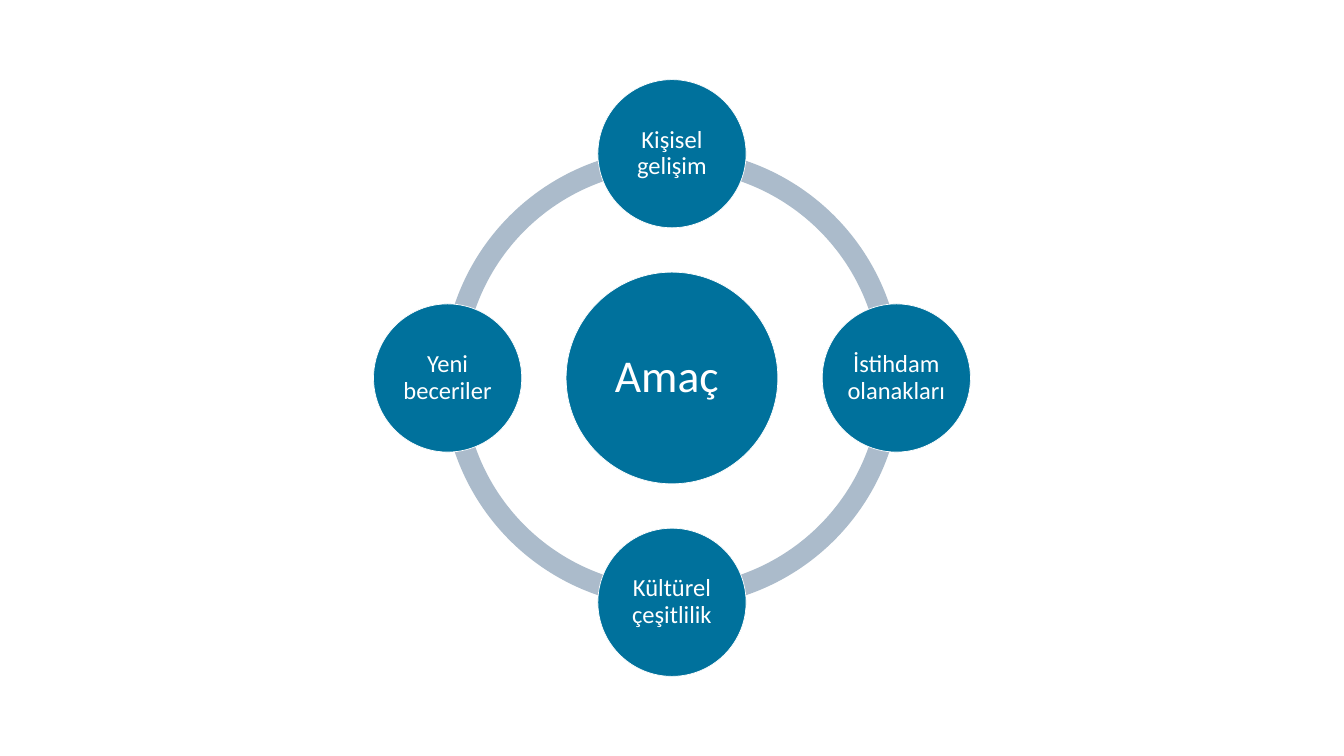
from dataclasses import dataclass
from math import cos, pi, sin

from pptx import Presentation
from pptx.dml.color import RGBColor
from pptx.enum.shapes import MSO_SHAPE as Shape
from pptx.enum.text import MSO_ANCHOR as Anchor, PP_ALIGN as Align
from pptx.util import Inches, Pt


@dataclass(frozen=True)
class Theme:
    disc: RGBColor = RGBColor.from_string("00719C")
    ring: RGBColor = RGBColor.from_string("ABBBCB")
    light: RGBColor = RGBColor.from_string("FFFFFF")
    font: str = "Calibri"
    goal_size: int = 65
    benefit_size: int = 35


THEME = Theme()
WIDTH, HEIGHT = 26.66, 15
CENTRE_X, CENTRE_Y = WIDTH / 2, HEIGHT / 2

# Diameters and orbit as shares of the slide height
RING = 0.607 * HEIGHT
GOAL = 0.28 * HEIGHT
BENEFIT = 0.196 * HEIGHT
ORBIT = 0.2967 * HEIGHT

# Block arc angles count in units of 100000 / 60000 degrees
FULL_TURN = 216
RING_THICKNESS = 0.046

BENEFITS = [
    "Kişisel gelişim",
    "İstihdam olanakları",
    "Kültürel çeşitlilik",
    "Yeni beceriler",
]


def add_round(slide, kind, x, y, diameter, color):
    """Add a filled shape centred on x, y."""
    left, top = x - diameter / 2, y - diameter / 2
    shape = slide.shapes.add_shape(
        kind, Inches(left), Inches(top), Inches(diameter), Inches(diameter))
    shape.shadow.inherit = False
    shape.fill.solid()
    shape.fill.fore_color.rgb = color
    return shape


def add_ring_arc(slide, start, sweep):
    arc = add_round(slide, Shape.BLOCK_ARC, CENTRE_X, CENTRE_Y, RING, THEME.ring)
    arc.line.fill.background()
    for i, value in enumerate((start, (start + sweep) % FULL_TURN, RING_THICKNESS)):
        arc.adjustments[i] = value


def add_disc(slide, label, x, y, diameter, size, inset):
    disc = add_round(slide, Shape.OVAL, x, y, diameter, THEME.disc)
    disc.line.color.rgb = THEME.light
    disc.line.width = Pt(1)

    frame = disc.text_frame
    frame.word_wrap = True
    frame.vertical_anchor = Anchor.MIDDLE
    frame.margin_left = frame.margin_right = Inches(inset)
    frame.margin_top = frame.margin_bottom = Inches(inset)

    paragraph = frame.paragraphs[0]
    paragraph.text = label
    paragraph.alignment = Align.CENTER
    paragraph.line_spacing = 0.9
    paragraph.font.name = THEME.font
    paragraph.font.size = Pt(size)
    paragraph.font.color.rgb = THEME.light


def main():
    deck = Presentation()
    deck.slide_width, deck.slide_height = Inches(WIDTH), Inches(HEIGHT)
    slide = deck.slides.add_slide(deck.slide_layouts[6])

    # Ring: one arc between each pair of neighbouring benefits
    sweep = FULL_TURN // len(BENEFITS)
    for start in range(0, FULL_TURN, sweep):
        add_ring_arc(slide, start, sweep)

    # Goal in the centre
    add_disc(slide, "Amaç ", CENTRE_X, CENTRE_Y, GOAL, THEME.goal_size, 0.09)

    # Benefits clockwise from the top
    for i, benefit in enumerate(BENEFITS):
        angle = 2 * pi * i / len(BENEFITS)
        x = CENTRE_X + ORBIT * sin(angle)
        y = CENTRE_Y - ORBIT * cos(angle)
        add_disc(slide, benefit, x, y, BENEFIT, THEME.benefit_size, 0.05)

    deck.save("out.pptx")


if __name__ == "__main__":
    main()
